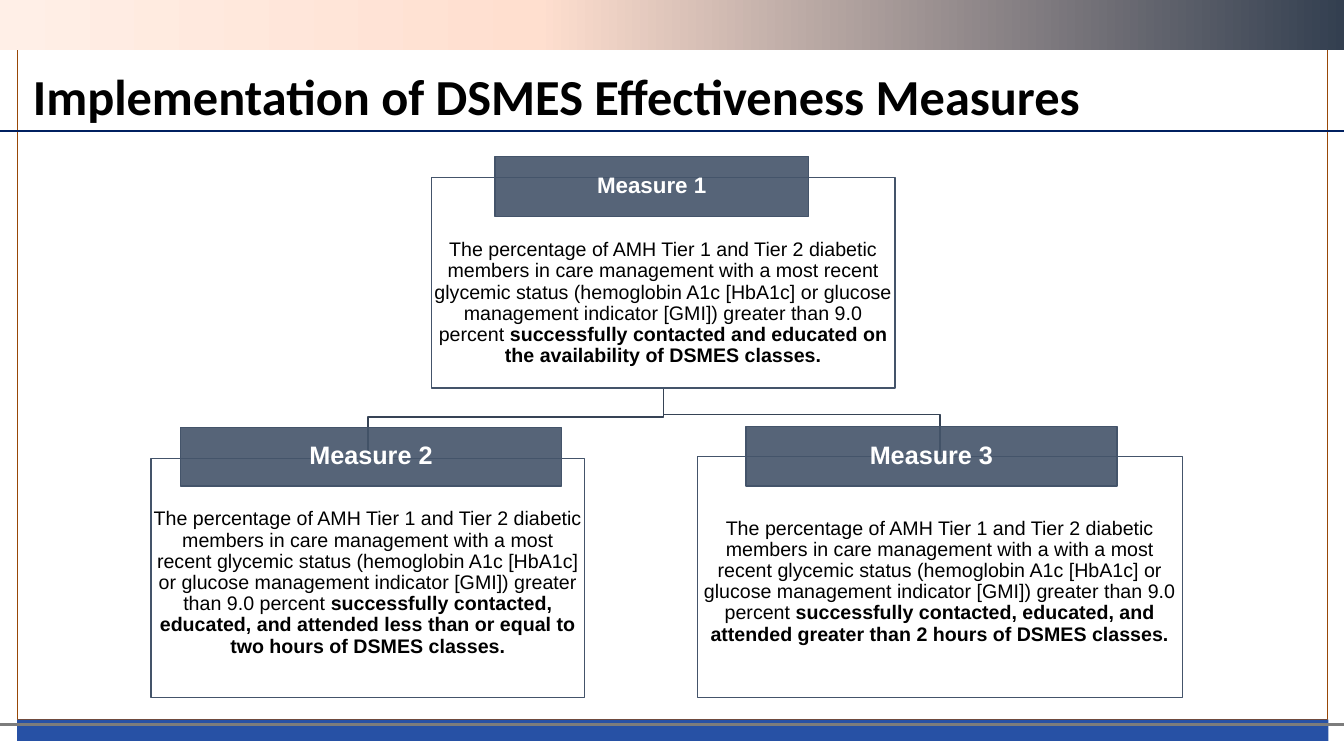
from copy import deepcopy
from dataclasses import dataclass

from pptx import Presentation
from pptx.dml.color import RGBColor
from pptx.enum.shapes import MSO_CONNECTOR, MSO_SHAPE
from pptx.enum.text import MSO_ANCHOR, PP_ALIGN
from pptx.oxml.ns import qn
from pptx.shapes.autoshape import Shape
from pptx.slide import Slide
from pptx.util import Pt

WIDTH, HEIGHT = 960, 540
SLATE = "44546A"
INTRO = "The percentage of AMH Tier 1 and Tier 2 diabetic members in care management with a "
CRITERION = (
    "most recent glycemic status (hemoglobin A1c [HbA1c] or glucose "
    "management indicator [GMI]) greater than 9.0 percent "
)


@dataclass(frozen=True)
class Box:
    left: float
    top: float
    width: float
    height: float

    @property
    def center(self) -> float:
        return self.left + self.width / 2

    @property
    def bottom(self) -> float:
        return self.top + self.height


@dataclass(frozen=True)
class Measure:
    label: str
    label_size: float
    header: Box
    body: Box
    text_top: float
    text: str
    outcome: str


MEASURES = [
    Measure(
        "Measure 1", 16, Box(353.5, 111.6, 224, 43.2), Box(308.2, 126.7, 331.2, 150.5), 44.6,
        INTRO + CRITERION,
        "successfully contacted and educated on the availability of DSMES classes.",
    ),
    Measure(
        "Measure 2", 18, Box(128.9, 305.3, 272.2, 41.8), Box(108, 327.6, 309.6, 170.6), 36,
        INTRO + CRITERION,
        "successfully contacted, educated, and attended less than or equal to "
        "two hours of DSMES classes.",
    ),
    Measure(
        "Measure 3", 18, Box(532.8, 304.6, 265, 42.5), Box(498.2, 326.2, 346.3, 172), 44,
        INTRO + "with a " + CRITERION,
        "successfully contacted, educated, and attended greater than 2 hours of DSMES classes.",
    ),
]


def color(value: str) -> RGBColor:
    return RGBColor.from_string(value)


def add_box(
    slide: Slide, box: Box, fill: str | None = None, line: str | None = None, weight: float = 1
) -> Shape:
    s = slide.shapes.add_shape(
        MSO_SHAPE.RECTANGLE, Pt(box.left), Pt(box.top), Pt(box.width), Pt(box.height)
    )
    s.shadow.inherit = False
    if fill:
        s.fill.solid()
        s.fill.fore_color.rgb = color(fill)
    else:
        s.fill.background()
    if line:
        s.line.color.rgb = color(line)
        s.line.width = Pt(weight)
    else:
        s.line.fill.background()
    return s


def add_rule(slide: Slide, y: float, line: str, weight: float) -> None:
    c = slide.shapes.add_connector(MSO_CONNECTOR.STRAIGHT, Pt(0), Pt(y), Pt(WIDTH), Pt(y))
    c.line.color.rgb = color(line)
    c.line.width = Pt(weight)
    sp_pr = c._element.spPr
    sp_pr.append(sp_pr.makeelement(qn("a:effectLst"), {}))


def add_banner(slide: Slide) -> None:
    s = add_box(slide, Box(0, 0, WIDTH, 36))
    s.fill.gradient()
    s.fill.gradient_angle = 180
    stop_list = s._element.spPr.find(qn("a:gradFill")).find(qn("a:gsLst"))
    stop_list.append(deepcopy(stop_list[0]))
    stops = [(0, "333F50"), (0.6, "FFDFCF"), (1, "FFEFE7")]
    for stop, (position, value) in zip(s.fill.gradient_stops, stops):
        stop.position = position
        stop.color.rgb = color(value)


def add_frame(slide: Slide) -> None:
    add_box(slide, Box(12.2, 10.8, 936, 503.3), line="984807", weight=0.75)
    add_box(slide, Box(12.2, 514, 936.7, 15.2), fill="2751A5")
    add_banner(slide)
    add_rule(slide, 517.7, "7C7C7C", 2.25)
    add_rule(slide, 93.6, "002060", 2)


def set_title(slide: Slide, text: str) -> None:
    s = slide.shapes.title
    s.left, s.top, s.width, s.height = Pt(0), Pt(49), Pt(WIDTH), Pt(43.2)
    tf = s.text_frame
    tf.text = text
    tf.margin_left = Pt(23.5)
    tf.vertical_anchor = MSO_ANCHOR.MIDDLE
    p = tf.paragraphs[0]
    p.alignment = PP_ALIGN.LEFT
    p.line_spacing = 0.9
    f = p.runs[0].font
    f.name, f.size, f.bold = "Calibri", Pt(36), True
    f.color.rgb = color("000000")


def add_branch(slide: Slide, parent: Box, child: Box, bend: float) -> None:
    builder = slide.shapes.build_freeform(Pt(parent.center), Pt(parent.bottom))
    points = [(parent.center, bend), (child.center, bend), (child.center, child.top)]
    builder.add_line_segments([(Pt(x), Pt(y)) for x, y in points], close=False)
    s = builder.convert_to_shape()
    s.shadow.inherit = False
    s.fill.background()
    s.line.color.rgb = color("364355")
    s.line.width = Pt(1)


def write(
    s: Shape, parts: list[tuple[str, bool]], size: float, value: str,
    anchor: MSO_ANCHOR, side: float, top: float = 0.7,
) -> None:
    tf = s.text_frame
    tf.word_wrap = True
    tf.vertical_anchor = anchor
    tf.margin_left = tf.margin_right = Pt(side)
    tf.margin_top, tf.margin_bottom = Pt(top), Pt(0.7)
    p = tf.paragraphs[0]
    p.alignment = PP_ALIGN.CENTER
    p.line_spacing = 0.9
    for text, bold in parts:
        r = p.add_run()
        r.text = text
        r.font.name, r.font.size, r.font.bold = "Arial", Pt(size), bold
        r.font.color.rgb = color(value)


def add_measure(slide: Slide, m: Measure) -> None:
    body = add_box(slide, m.body, "FFFFFF", SLATE)
    write(body, [(m.text, False), (m.outcome, True)], 14, "000000",
          MSO_ANCHOR.TOP, 0.7, m.text_top)
    header = add_box(slide, m.header, SLATE, SLATE)
    fill = header._element.spPr.find(qn("a:solidFill"))[0]
    fill.append(fill.makeelement(qn("a:alpha"), {"val": "90000"}))
    write(header, [(m.label, True)], m.label_size, "FFFFFF", MSO_ANCHOR.MIDDLE, 3.6)


def main() -> None:
    prs = Presentation()
    prs.slide_width, prs.slide_height = Pt(WIDTH), Pt(HEIGHT)
    slide = prs.slides.add_slide(prs.slide_layouts[5])
    add_frame(slide)
    set_title(slide, "Implementation of DSMES Effectiveness Measures")
    first, second, third = MEASURES
    add_branch(slide, first.body, third.body, 296)
    add_branch(slide, first.body, second.body, 298)
    for m in MEASURES:
        add_measure(slide, m)
    prs.save("out.pptx")


if __name__ == "__main__":
    main()
